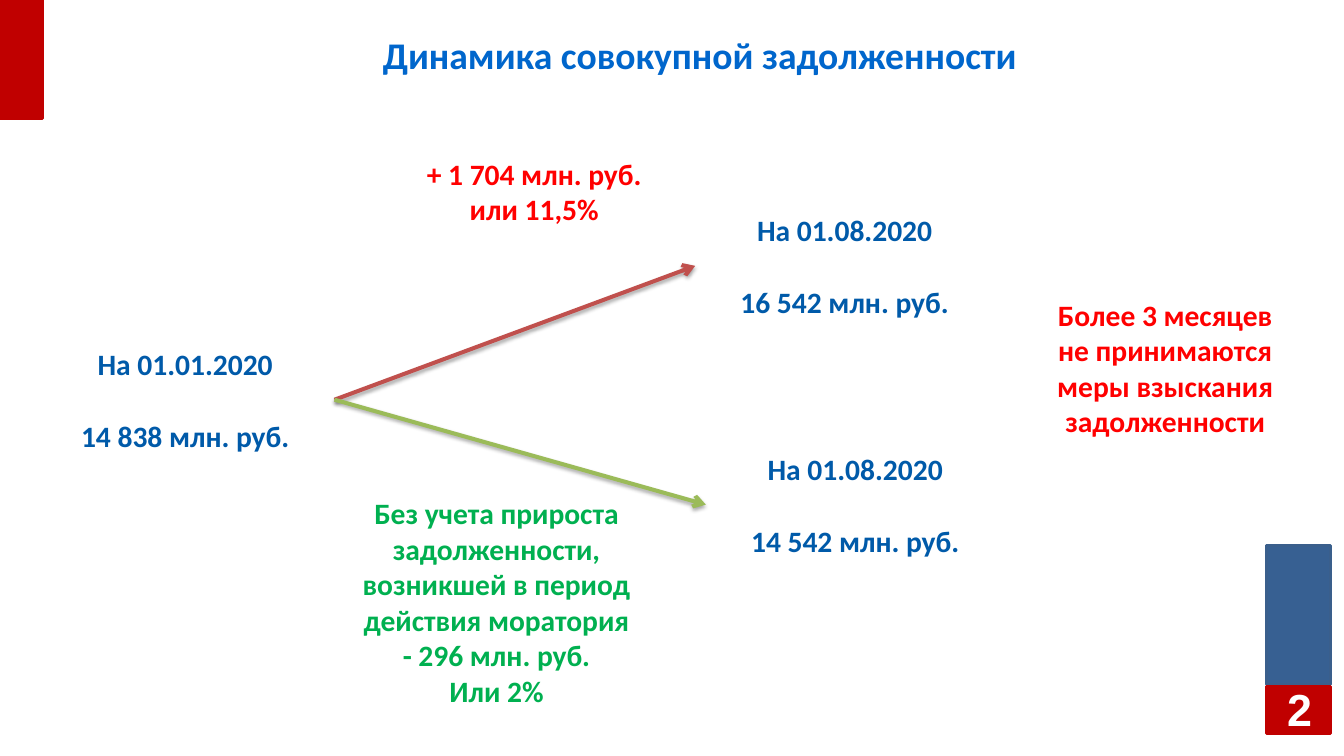
from dataclasses import dataclass

import pptx
import pptx.dml.color
import pptx.enum.shapes
import pptx.enum.text
import pptx.oxml
import pptx.oxml.ns
import pptx.util
from pptx.util import Inches

RED, BRIGHT_RED, GREEN = "C00000", "FF0000", "00B050"
STEEL, TITLE_BLUE, BLUE, WHITE = "376092", "0066CC", "005AA9", "FFFFFF"
LINE_GAP = 26.8  # one text line between a date and its amount


@dataclass
class Block:
    left: float
    top: float
    width: float
    height: float
    fill: str
    line: str


@dataclass
class Label:
    left: float
    top: float
    width: float
    height: float
    lines: list[str]
    color: str
    size: float = 22
    font: str = "Calibri"
    gap: float = 0
    inset_x: float = 0.11
    inset_y: float = 0.06


@dataclass
class Arrow:
    start: str
    end: str
    color: str


BLOCKS = [
    Block(13.1, 5.64, 0.66, 1.44, STEEL, "3A5F8C"),
    Block(13.1, 7.1, 0.66, 0.49, RED, RED),
    Block(0, 0, 0.44, 1.23, RED, RED),
]

LABELS = {
    "title": Label(0.87, 0.26, 12.73, 0.6,
                   ["Динамика совокупной задолженности"], TITLE_BLUE, 28),
    "january": Label(0.37, 3.54, 3.09, 1.19,
                     ["На 01.01.2020", "14 838 млн. руб."], BLUE, gap=LINE_GAP),
    "august total": Label(7.19, 2.23, 3.09, 1.04,
                          ["На 01.08.2020", "16 542 млн. руб."], BLUE, gap=LINE_GAP),
    "growth": Label(3.7, 1.42, 3.65, 1.12,
                    ["+ 1 704 млн. руб.", "или 11,5% "], BRIGHT_RED),
    "august adjusted": Label(7.3, 4.7, 3.09, 1.04,
                             ["На 01.08.2020", "14 542 млн. руб."], BLUE, gap=LINE_GAP),
    "decline": Label(3.31, 5.26, 3.65, 1.93,
                     ["Без учета прироста задолженности, возникшей в период "
                      "действия моратория", "- 296 млн. руб.", "Или 2% "], GREEN),
    "moratorium": Label(10.69, 2.1, 2.72, 3.41,
                        ["Более 3 месяцев не принимаются меры взыскания "
                         "задолженности"], BRIGHT_RED),
    "page number": Label(13.08, 7.12, 0.72, 0.42, ["2"], WHITE, 33.4, "Arial",
                         inset_x=0, inset_y=0.05),
}

ARROWS = [
    Arrow("january", "august total", "C0504D"),
    Arrow("january", "august adjusted", "9BBB59"),
]


def rgb(color: str) -> pptx.dml.color.RGBColor:
    return pptx.dml.color.RGBColor.from_string(color)


def add_block(slide, block: Block) -> None:
    sp = slide.shapes.add_shape(
        pptx.enum.shapes.MSO_SHAPE.RECTANGLE, Inches(block.left),
        Inches(block.top), Inches(block.width), Inches(block.height))
    sp.shadow.inherit = False
    sp.fill.solid()
    sp.fill.fore_color.rgb = rgb(block.fill)
    sp.line.color.rgb = rgb(block.line)
    sp.line.width = pptx.util.Pt(2)


def add_label(slide, label: Label):
    sp = slide.shapes.add_textbox(Inches(label.left), Inches(label.top),
                                  Inches(label.width), Inches(label.height))
    tf = sp.text_frame
    tf.word_wrap = True
    tf.vertical_anchor = pptx.enum.text.MSO_ANCHOR.MIDDLE
    tf.margin_left = tf.margin_right = Inches(label.inset_x)
    tf.margin_top = tf.margin_bottom = Inches(label.inset_y)
    for i, text in enumerate(label.lines):
        p = tf.add_paragraph() if i else tf.paragraphs[0]
        p.alignment = pptx.enum.text.PP_ALIGN.CENTER
        if i and label.gap:
            p.space_before = pptx.util.Pt(label.gap)
        r = p.add_run()
        r.text = text.strip()
        r.font.name = label.font
        r.font.size = pptx.util.Pt(label.size)
        r.font.bold = True
        r.font.color.rgb = rgb(label.color)
    return sp


def add_arrow(slide, arrow: Arrow, boxes: dict) -> None:
    cn = slide.shapes.add_connector(
        pptx.enum.shapes.MSO_CONNECTOR.STRAIGHT, 0, 0, 0, 0)
    cn.begin_connect(boxes[arrow.start], 3)
    cn.end_connect(boxes[arrow.end], 1)
    cn.line.color.rgb = rgb(arrow.color)
    cn.line.width = pptx.util.Pt(3)
    # Arrowhead and soft shadow
    ns = pptx.oxml.ns.nsdecls("a")
    cn.line._get_or_add_ln().append(
        pptx.oxml.parse_xml(f'<a:tailEnd {ns} type="arrow"/>'))
    blur, dist = pptx.util.Pt(3.1), pptx.util.Pt(1.8)
    cn._element.spPr.append(pptx.oxml.parse_xml(
        f'<a:effectLst {ns}><a:outerShdw blurRad="{blur}" dist="{dist}" '
        'dir="5400000" rotWithShape="0"><a:srgbClr val="000000">'
        '<a:alpha val="35000"/></a:srgbClr></a:outerShdw></a:effectLst>'))


def main() -> None:
    prs = pptx.Presentation()
    prs.slide_width, prs.slide_height = Inches(13.9), Inches(7.82)
    slide = prs.slides.add_slide(prs.slide_layouts[6])

    # Corner blocks
    for block in BLOCKS:
        add_block(slide, block)

    # Title, amounts, comments and page number
    boxes = {name: add_label(slide, label) for name, label in LABELS.items()}

    # Arrows from January to both August amounts
    for arrow in ARROWS:
        add_arrow(slide, arrow, boxes)

    prs.save("out.pptx")


if __name__ == "__main__":
    main()
